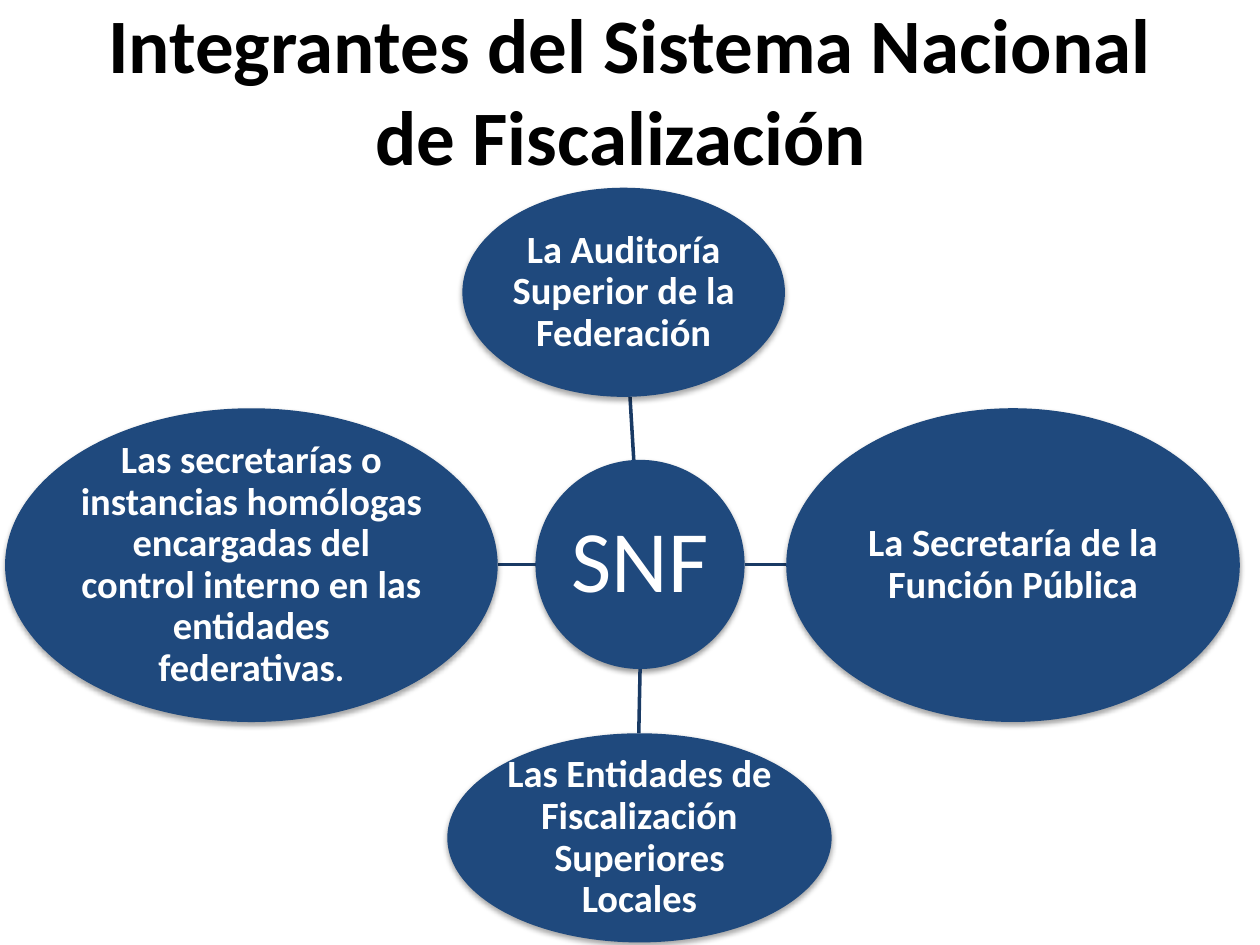
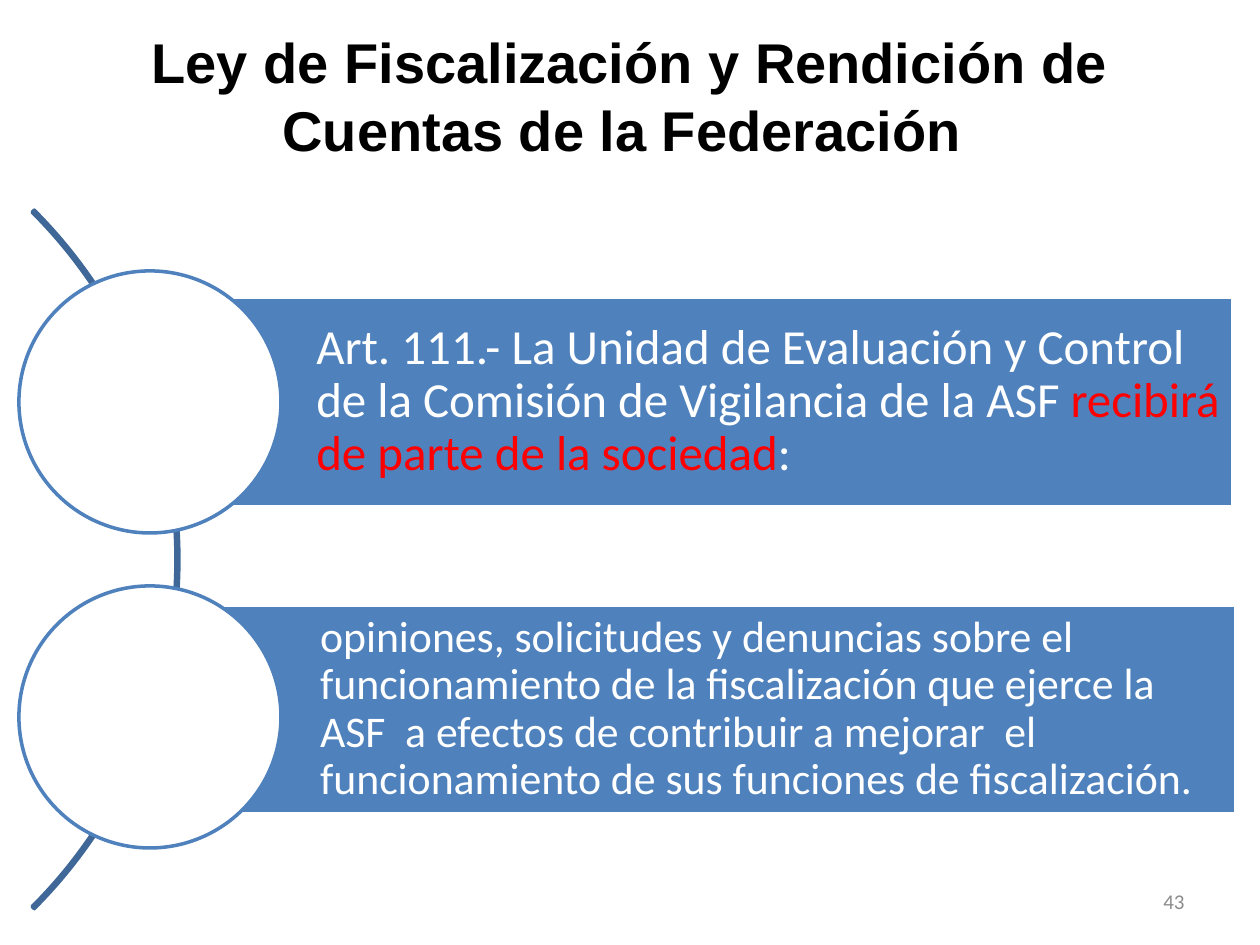
"""Build two slides on the national audit system and its law."""
from lxml import etree
from pptx import Presentation
from pptx.dml.color import RGBColor
from pptx.enum.shapes import MSO_CONNECTOR as Link, MSO_SHAPE as Form
from pptx.enum.text import MSO_ANCHOR as Anchor, PP_ALIGN as Align
from pptx.oxml.ns import qn
from pptx.util import Inches, Pt

NAVY = RGBColor(0x1F, 0x49, 0x7D)
DEEP = RGBColor(0x19, 0x3A, 0x64)
BLUE = RGBColor(0x4F, 0x81, 0xBD)
STEEL = RGBColor(0x3F, 0x67, 0x97)
RED = RGBColor(0xFF, 0x00, 0x00)
GRAY = RGBColor(0x8C, 0x8C, 0x8C)
BLACK = RGBColor(0, 0, 0)
WHITE = RGBColor(0xFF, 0xFF, 0xFF)
FONT = "Calibri"

HUB = (4.25, 3.65, 1.66, 1.66)
NODES = [
    ((3.67, 1.49, 2.56, 1.66), (5.03, 3.65, 5, 3.15),
     [("La Auditoría Superior de la Federación", 22)]),
    ((6.24, 3.24, 3.6, 2.49), (5.91, 4.48, 6.24, 4.48),
     [("La Secretaría de la Función Pública", 22)]),
    ((3.55, 5.82, 3.05, 1.66), (5.08, 5.31, 5.07, 5.82),
     [("Las Entidades de Fiscalización Superiores Locales", 22)]),
    ((0.04, 3.24, 3.91, 2.49), (4.25, 4.48, 3.95, 4.48),
     [("Las secretarías o instancias homólogas encargadas del control "
       "interno en las entidades federativas", 22), (".", 20)]),
]
BARS = [
    (1.19, 2.36, 2.15, 28, 0.08,
     [("Art. 111.- La Unidad de Evaluación y Control de la Comisión de "
       "Vigilancia de la ASF ", WHITE),
      ("recibirá de parte de la sociedad", RED), (":", WHITE)]),
    (1.22, 4.8, 4.65, 25, 0.07,
     [("opiniones, solicitudes y denuncias sobre el funcionamiento de la "
       "fiscalización que ejerce la ASF  a efectos de contribuir a mejorar  "
       "el funcionamiento de sus funciones de fiscalización.", WHITE)]),
]


def add_run(para, text, size, color, bold=False, font=FONT):
    """Append one styled run to a paragraph."""
    run = para.add_run()
    run.text = text
    run.font.size = Pt(size)
    run.font.color.rgb = color
    run.font.bold = bold
    run.font.name = font


def set_frame(shape, align, pads=(0.1, 0.05, 0.1, 0.05), lead=1.0):
    """Prepare a text frame and return its first paragraph."""
    frame = shape.text_frame
    frame.word_wrap = True
    frame.vertical_anchor = Anchor.MIDDLE
    (frame.margin_left, frame.margin_top,
     frame.margin_right, frame.margin_bottom) = map(Inches, pads)
    para = frame.paragraphs[0]
    para.alignment = align
    para.line_spacing = lead
    return para


def add_text(slide, box, text, size, color, align, bold=False, font=FONT):
    """Add a text box with a single run."""
    shape = slide.shapes.add_textbox(*map(Inches, box))
    add_run(set_frame(shape, align), text, size, color, bold, font)


def add_title(slide, top, text, size, font=FONT):
    """Add the bold centred slide title."""
    add_text(slide, (0.5, top, 9, 1.25), text, size, BLACK,
             Align.CENTER, True, font)


def add_form(slide, form, box, fill=None, line=None):
    """Add a flat preset shape with optional fill and outline."""
    shape = slide.shapes.add_shape(form, *map(Inches, box))
    shape.shadow.inherit = False
    if fill is None:
        shape.fill.background()
    else:
        shape.fill.solid()
        shape.fill.fore_color.rgb = fill
    if line is None:
        shape.line.fill.background()
    else:
        shape.line.color.rgb = line
        shape.line.width = Pt(2)
    return shape


def add_shade(shape, alpha, dist):
    """Give a shape a soft shadow that falls straight down."""
    effects = shape.element.spPr.find(qn("a:effectLst"))
    shade = etree.SubElement(
        effects, qn("a:outerShdw"), blurRad=str(Pt(3.1)),
        dist=str(Pt(dist)), dir="5400000", rotWithShape="0")
    color = etree.SubElement(shade, qn("a:srgbClr"), val="000000")
    etree.SubElement(color, qn("a:alpha"), val=str(alpha * 1000))


def add_oval(slide, box, runs, bold=True, pad=0.02, alpha=35, dist=1.8):
    """Add a shaded oval holding centred white text."""
    oval = add_form(slide, Form.OVAL, box, NAVY)
    add_shade(oval, alpha, dist)
    para = set_frame(oval, Align.CENTER, (pad,) * 4, 0.9)
    for text, size in runs:
        add_run(para, text, size, WHITE, bold)


def add_link(slide, ends):
    """Add a straight line between two points."""
    link = slide.shapes.add_connector(Link.STRAIGHT, *map(Inches, ends))
    link.line.color.rgb = DEEP
    link.line.width = Pt(2)
    etree.SubElement(link.element.spPr, qn("a:effectLst"))


def add_arc(slide):
    """Add the thin arc that runs behind the circles."""
    arc = add_form(slide, Form.BLOCK_ARC, (-6.42, 0.52, 7.84, 7.84),
                   line=STEEL)
    for index, value in enumerate((189, 27, 0.003)):
        arc.adjustments[index] = value


def add_bar(slide, left, top, ring, size, pad, runs):
    """Add a text bar with a white circle over its left end."""
    bar = add_form(slide, Form.RECTANGLE, (left, top, 8.59, 1.66),
                   BLUE, WHITE)
    para = set_frame(bar, Align.LEFT, (1.32, pad, pad, pad), 0.9)
    for text, color in runs:
        add_run(para, text, size, color)
    add_form(slide, Form.OVAL, (0.15, ring, 2.08, 2.08), WHITE, BLUE)


def draw_system(slide):
    """Draw the hub and its four members."""
    add_title(slide, 0.08,
              "Integrantes del Sistema Nacional de Fiscalización ", 44)
    add_oval(slide, HUB, [("SNF", 50)], False, 0.03, 38, 1.6)
    for box, ends, runs in NODES:
        add_link(slide, ends)
        add_oval(slide, box, runs)


def draw_law(slide):
    """Draw the article in two bars along an arc."""
    add_title(slide, 0.13, "Ley de Fiscalización y Rendición de Cuentas "
              "de la Federación ", 32, "Arial")
    add_text(slide, (7.17, 6.95, 2.33, 0.4), "43", 12, GRAY, Align.RIGHT)
    add_arc(slide)
    for bar in BARS:
        add_bar(slide, *bar)


def main():
    """Build and save the deck."""
    deck = Presentation()
    deck.slide_width = Inches(10)
    deck.slide_height = Inches(7.5)
    for draw in (draw_system, draw_law):
        draw(deck.slides.add_slide(deck.slide_layouts[6]))
    deck.save("out.pptx")


if __name__ == "__main__":
    main()
